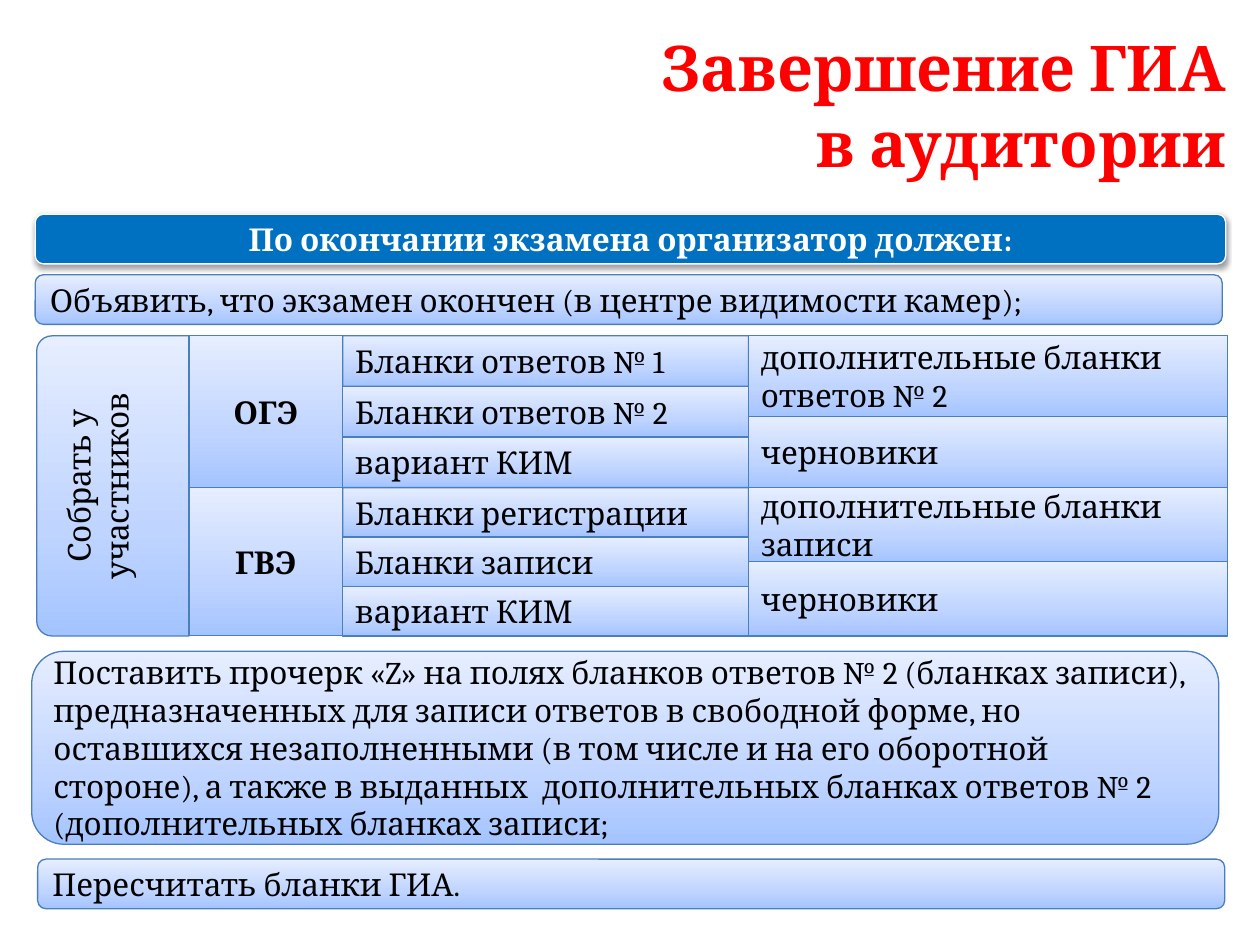
from copy import deepcopy
from itertools import accumulate
from lxml import etree
from pptx import Presentation
from pptx.dml.color import RGBColor as RGB
from pptx.enum.shapes import MSO_SHAPE as SHAPE
from pptx.enum.text import MSO_ANCHOR as ANCHOR, MSO_AUTO_SIZE as AUTO, PP_ALIGN as ALIGN
from pptx.oxml import parse_xml
from pptx.oxml.ns import nsdecls, qn
from pptx.util import Cm, Pt

THEME = {
    "font": "Cambria",
    "title": {"size": Pt(36), "bold": True, "color": "FF0000"},
    "header": {"size": Pt(18), "bold": True, "color": "FFFFFF"},
    "body": {"size": Pt(18), "bold": False, "color": "000000"},
    "exam": {"size": Pt(18), "bold": True, "color": "000000"},
    "header_fill": "0070C0",
    "header_line": "FFFFFF",
    "line": "4B7EBC",
    "line_width": Pt(0.75),
    "gradient": [(0, "A4C4FF"), (0.35, "BFD4FF"), (1, "E6EEFF")],
}

TITLE = ["Завершение ГИА", "в аудитории"]
TITLE_BOX = (2.9, 0.51, 22.07, 3.18)
HEADER = ("По окончании экзамена организатор должен:", (0.71, 4.32, 24, 1))
STEPS = [
    ("Объявить, что экзамен окончен (в центре видимости камер);", (0.71, 5.54, 23.93, 1)),
    ("Поставить прочерк «Z» на полях бланков ответов № 2 (бланках записи), "
     "предназначенных для записи ответов в свободной форме, но оставшихся "
     "незаполненными (в том числе и на его оборотной стороне), а также в выданных  "
     "дополнительных бланках ответов № 2 (дополнительных бланках записи;",
     (0.64, 13.13, 23.93, 3.89)),
    ("Пересчитать бланки ГИА.", (0.76, 17.32, 23.93, 1)),
]
COLLECT = "Собрать у участников"
EXAMS = [
    {"name": "ОГЭ", "height": 3.06, "split": 0.53,
     "main": ["Бланки ответов № 1", "Бланки ответов № 2", "вариант КИМ"],
     "extra": ["дополнительные бланки ответов № 2", "черновики"]},
    {"name": "ГВЭ", "height": 2.99, "split": 0.5,
     "main": ["Бланки регистрации", "Бланки записи", "вариант КИМ"],
     "extra": ["дополнительные бланки записи", "черновики"]},
]
GRID_TOP = 6.77
COLUMNS = [0.74, 3.81, 6.91, 15.09, 24.74]


def write(tf, lines, style, align):
    for key, value in {"word_wrap": True, "auto_size": AUTO.NONE,
                       "vertical_anchor": ANCHOR.MIDDLE}.items():
        setattr(tf, key, value)
    look = THEME[style]
    for i, line in enumerate(lines):
        p = tf.paragraphs[0] if i == 0 else tf.add_paragraph()
        p.alignment = align
        r = p.add_run()
        r.text = line
        for key, value in {"name": THEME["font"], "size": look["size"],
                           "bold": look["bold"]}.items():
            setattr(r.font, key, value)
        r.font.color.rgb = RGB.from_string(look["color"])


def fill_gradient(sp, angle):
    sp.fill.gradient()
    sp.fill.gradient_angle = angle
    stops = sp.element.spPr.find(qn("a:gradFill")).find(qn("a:gsLst"))
    stops.append(deepcopy(stops[-1]))
    for stop, (position, color) in zip(sp.fill.gradient_stops, THEME["gradient"]):
        stop.position = position
        stop.color.rgb = RGB.from_string(color)


def add_box(shapes, kind, box, text, style="body", align=ALIGN.LEFT, angle=90):
    sp = shapes.add_shape(kind, *map(Cm, box))
    sp.shadow.inherit = False
    fill_gradient(sp, angle)
    sp.line.color.rgb = RGB.from_string(THEME["line"])
    sp.line.width = THEME["line_width"]
    write(sp.text_frame, [text], style, align)
    return sp


def add_header(shapes):
    text, box = HEADER
    sp = add_box(shapes, SHAPE.ROUNDED_RECTANGLE, box, text, "header", ALIGN.CENTER)
    sp.fill.solid()
    sp.fill.fore_color.rgb = RGB.from_string(THEME["header_fill"])
    sp.line.color.rgb = RGB.from_string(THEME["header_line"])
    effects = sp.element.spPr.find(qn("a:effectLst"))
    effects.append(parse_xml(
        f'<a:outerShdw {nsdecls("a")} blurRad="{Pt(3.1)}" dist="{Pt(1.6)}" '
        'dir="5400000" rotWithShape="0"><a:srgbClr val="000000">'
        '<a:alpha val="38000"/></a:srgbClr></a:outerShdw>'))


def add_column(shapes, col, top, heights, texts, first_kind=SHAPE.RECTANGLE):
    left, width = COLUMNS[col], COLUMNS[col + 1] - COLUMNS[col]
    tops = accumulate(heights, initial=top)
    for i, (y, height, text) in enumerate(zip(tops, heights, texts)):
        kind = SHAPE.RECTANGLE if i else first_kind
        sp = add_box(shapes, kind, (left, y, width, height), text)
        if kind == SHAPE.SNIP_ROUND_RECTANGLE:
            sp.adjustments[0], sp.adjustments[1] = 0.01, 0


def add_collect(shapes):
    length = sum(exam["height"] for exam in EXAMS)
    width = COLUMNS[1] - COLUMNS[0]
    box = (COLUMNS[0] + (width - length) / 2, GRID_TOP + (length - width) / 2, length, width)
    sp = add_box(shapes, SHAPE.ROUND_2_SAME_RECTANGLE, box, COLLECT,
                 align=ALIGN.CENTER, angle=0)
    sp.rotation = 270
    sp.adjustments[0] = 0.1
    sp.text_frame.margin_bottom = Cm(0.85)


def add_grid(shapes):
    add_collect(shapes)
    top = GRID_TOP
    for exam in EXAMS:
        height, split, main = exam["height"], exam["split"], exam["main"]
        add_box(shapes, SHAPE.RECTANGLE, (COLUMNS[1], top, COLUMNS[2] - COLUMNS[1], height),
                exam["name"], "exam", ALIGN.CENTER)
        add_column(shapes, 2, top, [height / len(main)] * len(main), main,
                   SHAPE.SNIP_ROUND_RECTANGLE)
        add_column(shapes, 3, top, [height * split, height * (1 - split)], exam["extra"])
        top += height


def main():
    prs = Presentation()
    prs.slide_width, prs.slide_height = Cm(25.4), Cm(19.05)
    s = prs.slides.add_slide(prs.slide_layouts[5])
    title = s.shapes.title
    for key, value in zip(("left", "top", "width", "height"), TITLE_BOX):
        setattr(title, key, Cm(value))
    write(title.text_frame, TITLE, "title", ALIGN.RIGHT)
    add_header(s.shapes)
    for text, box in STEPS:
        add_box(s.shapes, SHAPE.ROUNDED_RECTANGLE, box, text)
    add_grid(s.shapes.add_group_shape().shapes)
    prs.save("out.pptx")


if __name__ == "__main__":
    main()
